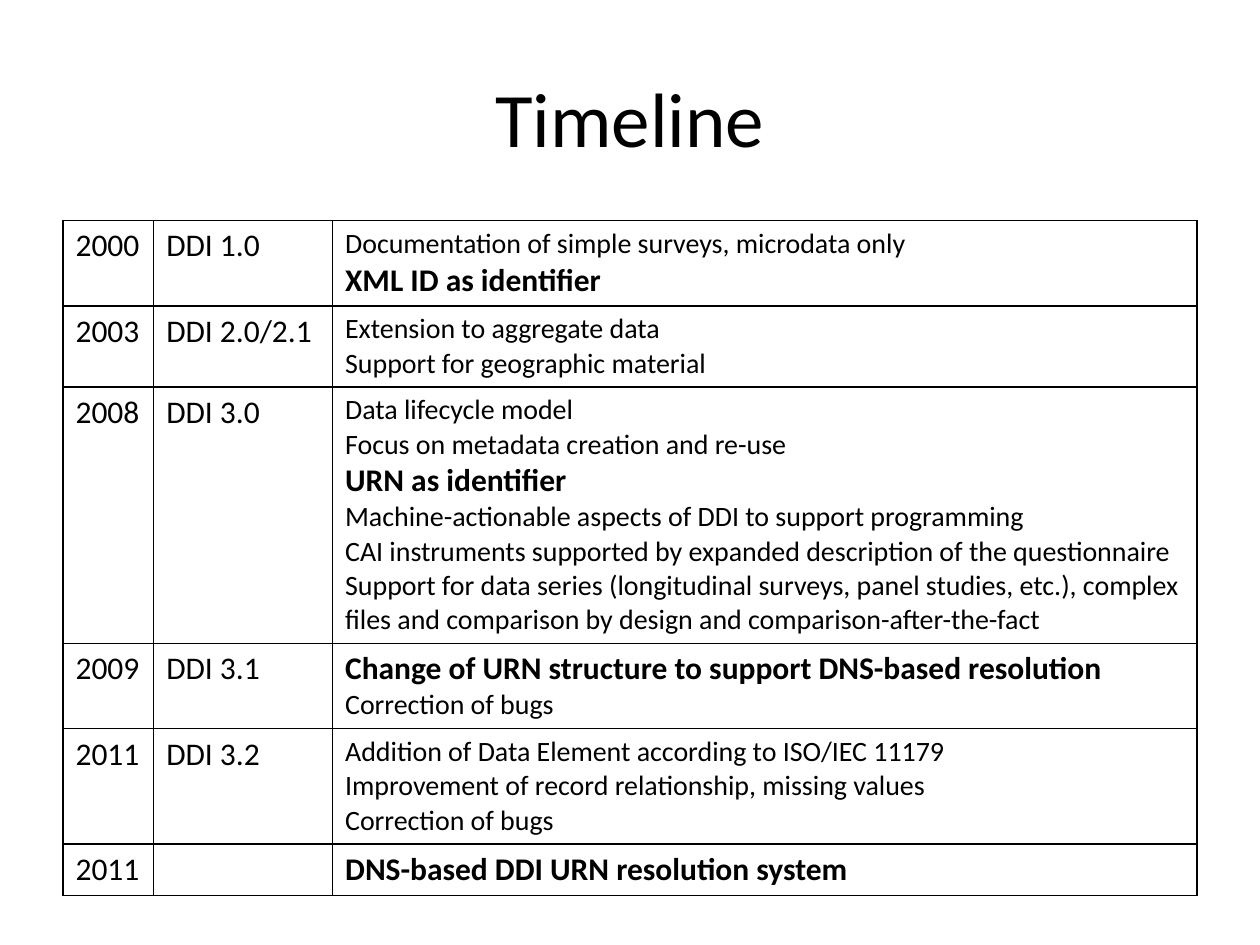
from dataclasses import dataclass

from lxml import etree
from pptx import Presentation
from pptx.dml.color import RGBColor
from pptx.enum.text import MSO_ANCHOR, PP_ALIGN
from pptx.oxml.ns import qn
from pptx.util import Inches, Pt

MIDDLE = MSO_ANCHOR.MIDDLE
CENTER = PP_ALIGN.CENTER
TITLE_ONLY = 5


@dataclass(frozen=True)
class Theme:
    font: str = "Calibri"
    ink: str = "000000"
    title: int = 44
    main: int = 18
    note: int = 16
    rule: int = 1


THEME = Theme()
COLS = (0.72, 1.42, 6.86)
ROW = 0.41

# Year, version, and changes; a change marked True is a key point.
EVENTS = [
    ("2000", "DDI 1.0", [
        ("Documentation of simple surveys, microdata only", False),
        ("XML ID as identifier", True),
    ]),
    ("2003", "DDI 2.0/2.1", [
        ("Extension to aggregate data", False),
        ("Support for geographic material", False),
    ]),
    ("2008", "DDI 3.0", [
        ("Data lifecycle model", False),
        ("Focus on metadata creation and re-use", False),
        ("URN as identifier", True),
        ("Machine-actionable aspects of DDI to support programming", False),
        ("CAI instruments supported by expanded description of the "
         "questionnaire", False),
        ("Support for data series (longitudinal surveys, panel studies, "
         "etc.), complex files and comparison by design and "
         "comparison-after-the-fact", False),
    ]),
    ("2009", "DDI 3.1", [
        ("Change of URN structure to support DNS-based resolution", True),
        ("Correction of bugs", False),
    ]),
    ("2011", "DDI 3.2", [
        ("Addition of Data Element according to ISO/IEC 11179", False),
        ("Improvement of record relationship, missing values", False),
        ("Correction of bugs", False),
    ]),
    ("2011", "", [("DNS-based DDI URN resolution system", True)]),
]


def write(para, text, size, bold=False):
    para.text = text
    for font in [para.font] + [run.font for run in para.runs]:
        font.name = THEME.font
        font.size = Pt(size)
        font.bold = bold
        font.color.rgb = RGBColor.from_string(THEME.ink)


def add_title(slide, text):
    title = slide.shapes.title
    title.left, title.top = Inches(0.5), Inches(0.3)
    title.width, title.height = Inches(9), Inches(1.25)
    title.text_frame.vertical_anchor = MIDDLE
    para = title.text_frame.paragraphs[0]
    write(para, text, THEME.title)
    para.alignment = CENTER


def frame(cell):
    """Rule all four sides of a cell and clear its fill."""
    props = cell._tc.get_or_add_tcPr()
    for side in ("lnL", "lnR", "lnT", "lnB"):
        line = etree.SubElement(props, qn(f"a:{side}"), w=str(Pt(THEME.rule)))
        fill = etree.SubElement(line, qn("a:solidFill"))
        etree.SubElement(fill, qn("a:srgbClr"), val=THEME.ink)
    cell.fill.background()


def fill_cell(cell, lines):
    """Write (text, size, bold) lines, one paragraph each."""
    body = cell.text_frame
    for i, line in enumerate(lines):
        para = body.add_paragraph() if i else body.paragraphs[0]
        write(para, *line)
    frame(cell)


def add_events(slide, events):
    table = slide.shapes.add_table(
        len(events), len(COLS), Inches(0.5), Inches(1.75),
        Inches(sum(COLS)), Inches(ROW * len(events))).table
    table.first_row = table.horz_banding = False
    for col, width in zip(table.columns, COLS):
        col.width = Inches(width)
    for row, (year, version, changes) in zip(table.rows, events):
        row.height = Inches(ROW)
        notes = [(text, THEME.main if key else THEME.note, key)
                 for text, key in changes]
        for cell, lines in zip(row.cells, ([(year, THEME.main)],
                                           [(version, THEME.main)], notes)):
            fill_cell(cell, lines)


def main():
    deck = Presentation()
    deck.slide_width, deck.slide_height = Inches(10), Inches(7.5)
    slide = deck.slides.add_slide(deck.slide_layouts[TITLE_ONLY])
    add_title(slide, "Timeline")
    add_events(slide, EVENTS)
    deck.save("out.pptx")


if __name__ == "__main__":
    main()
